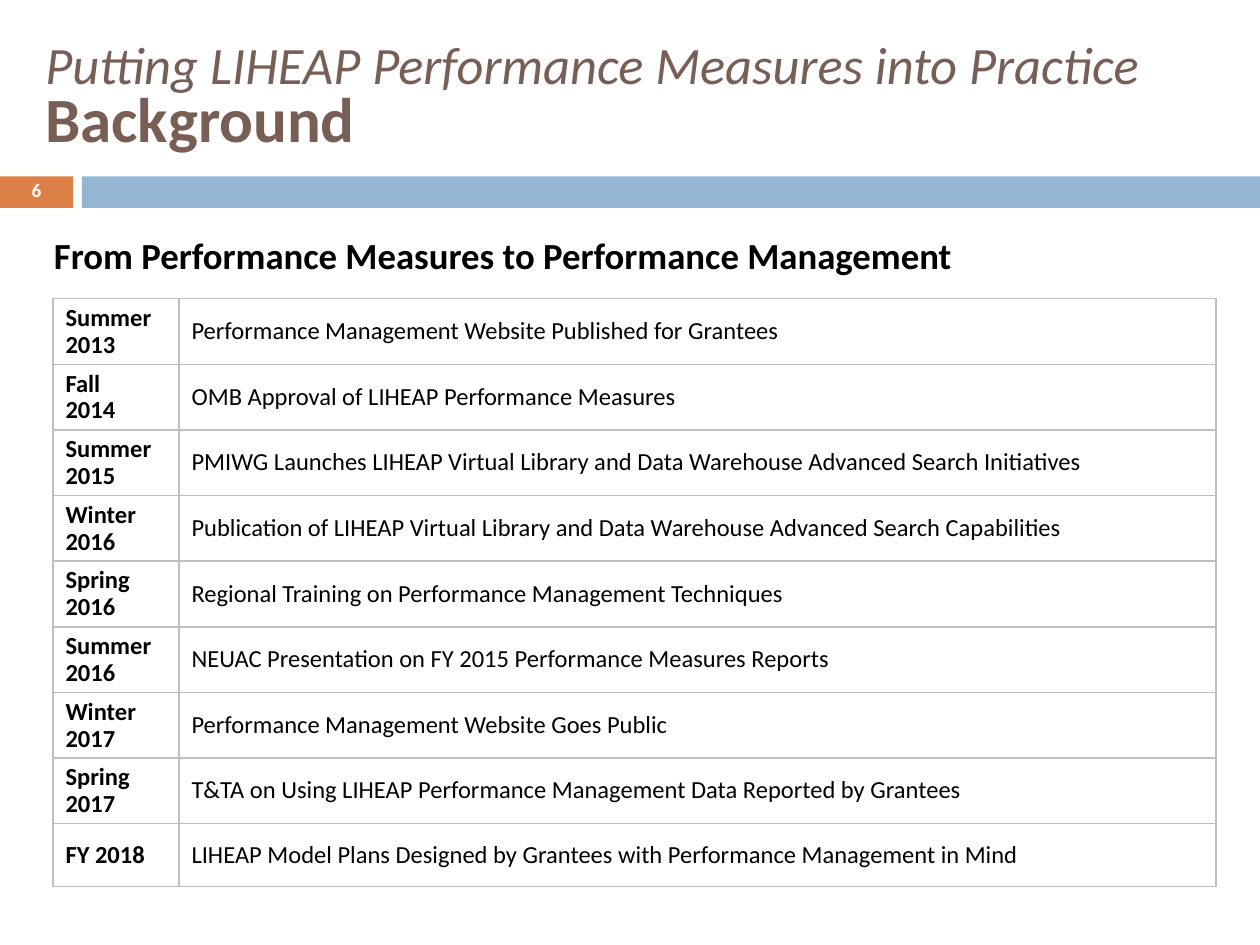
from lxml import etree
from pptx import Presentation
from pptx import util as u
from pptx.dml.color import RGBColor
from pptx.enum import shapes, text
from pptx.oxml.ns import qn

FONT = "Calibri"
BROWN, ORANGE, BLUE = "775F55", "DD8047", "94B6D2"
BLACK, WHITE, GRAY = "000000", "FFFFFF", "BFBFBF"

TITLE = "Putting LIHEAP Performance Measures into Practice "
SECTION = "Background"
SUBTITLE = "From Performance Measures to Performance Management"
PAGE_NUMBER = "6"
TIMELINE = [
    (["Summer", "2013"], "Performance Management Website Published for Grantees"),
    (["Fall", "2014"], "OMB Approval of LIHEAP Performance Measures"),
    (["Summer", "2015"], "PMIWG Launches LIHEAP Virtual Library and Data Warehouse Advanced Search Initiatives"),
    (["Winter", "2016"], "Publication of LIHEAP Virtual Library and Data Warehouse Advanced Search Capabilities"),
    (["Spring 2016"], "Regional Training on Performance Management Techniques"),
    (["Summer", "2016"], "NEUAC Presentation on FY 2015 Performance Measures Reports"),
    (["Winter", "2017"], "Performance Management Website Goes Public"),
    (["Spring 2017"], "T&TA on Using LIHEAP Performance Management Data Reported by Grantees"),
    (["FY 2018"], "LIHEAP Model Plans Designed by Grantees with Performance Management in Mind"),
]
COLUMN_WIDTHS = (1, 8.23)
ROW_HEIGHT = 0.5


def rgb(value):
    return RGBColor.from_string(value)


def box(*lengths):
    return [u.Inches(length) for length in lengths]


def add_run(paragraph, words, size, color=BLACK, bold=False, italic=False):
    run = paragraph.add_run()
    run.text = words
    font = run.font
    font.name, font.size, font.bold, font.italic = FONT, u.Pt(size), bold, italic
    font.color.rgb = rgb(color)


def write(frame, lines, spacing=1.0, align=text.PP_ALIGN.LEFT, before=0, **style):
    """Write one paragraph for each line."""
    frame.word_wrap = True
    for index, line in enumerate(lines):
        paragraph = frame.add_paragraph() if index else frame.paragraphs[0]
        paragraph.alignment = align
        paragraph.line_spacing = spacing
        paragraph.space_before = u.Pt(before)
        add_run(paragraph, line, **style)
    return frame.paragraphs[0]


def add_bar(slide, area, color):
    bar = slide.shapes.add_shape(shapes.MSO_SHAPE.RECTANGLE, *box(*area))
    bar.shadow.inherit = False
    bar.fill.solid()
    bar.fill.fore_color.rgb = rgb(color)
    bar.line.fill.background()


def add_text_frame(slide, area, anchor=text.MSO_ANCHOR.MIDDLE):
    frame = slide.shapes.add_textbox(*box(*area)).text_frame
    frame.vertical_anchor = anchor
    return frame


def set_borders(cell, color, width):
    properties = cell._tc.get_or_add_tcPr()
    for index, side in enumerate(("a:lnL", "a:lnR", "a:lnT", "a:lnB")):
        line = etree.Element(qn(side), w=str(u.Pt(width)))
        fill = etree.SubElement(line, qn("a:solidFill"))
        etree.SubElement(fill, qn("a:srgbClr"), val=color)
        properties.insert(index, line)


def add_timeline(slide):
    area = (0.42, 2.37, sum(COLUMN_WIDTHS), ROW_HEIGHT * len(TIMELINE))
    table = slide.shapes.add_table(len(TIMELINE), 2, *box(*area)).table
    table.first_row = table.horz_banding = False
    for column, width in zip(table.columns, COLUMN_WIDTHS):
        column.width = u.Inches(width)
    for row, (date, event) in zip(table.rows, TIMELINE):
        row.height = u.Inches(ROW_HEIGHT)
        for cell, lines, bold in zip(row.cells, (date, [event]), (True, False)):
            cell.vertical_anchor = text.MSO_ANCHOR.MIDDLE
            cell.fill.background()
            set_borders(cell, GRAY, 1)
            write(cell.text_frame, lines, spacing=0.9, size=14, bold=bold)


def main():
    presentation = Presentation()
    presentation.slide_width, presentation.slide_height = box(10, 7.5)
    slide = presentation.slides.add_slide(presentation.slide_layouts[6])

    # Divider band
    add_bar(slide, (0, 1.4, 0.58, 0.25), ORANGE)
    add_bar(slide, (0.65, 1.4, 9.35, 0.25), BLUE)

    # Title: two lines in one paragraph
    frame = add_text_frame(slide, (0, 0.25, 10.17, 1.08))
    frame.margin_left = u.Inches(0.36)
    heading = write(frame, [TITLE], spacing=0.8, size=30, color=BROWN, italic=True)
    heading.add_line_break()
    add_run(heading, SECTION, size=36, color=BROWN, bold=True)

    # Page number
    frame = add_text_frame(slide, (0, 1.39, 0.58, 0.27))
    write(frame, [PAGE_NUMBER], spacing=0.8, align=text.PP_ALIGN.CENTER,
          size=11, color=WHITE, bold=True)

    # Timeline and its heading
    add_timeline(slide)
    frame = add_text_frame(slide, (0.33, 1.8, 9.67, 0.48), text.MSO_ANCHOR.TOP)
    write(frame, [SUBTITLE], before=3.7, size=21, bold=True)

    presentation.save("out.pptx")


if __name__ == "__main__":
    main()
